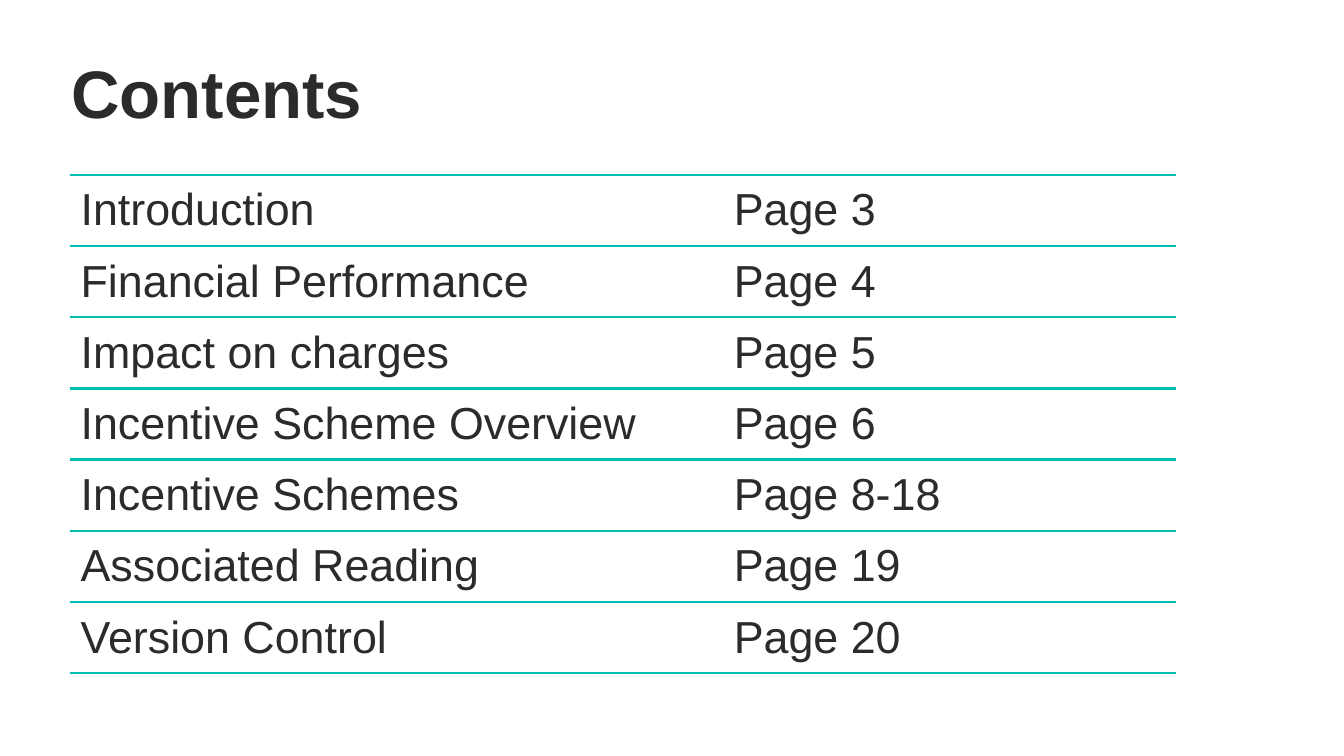
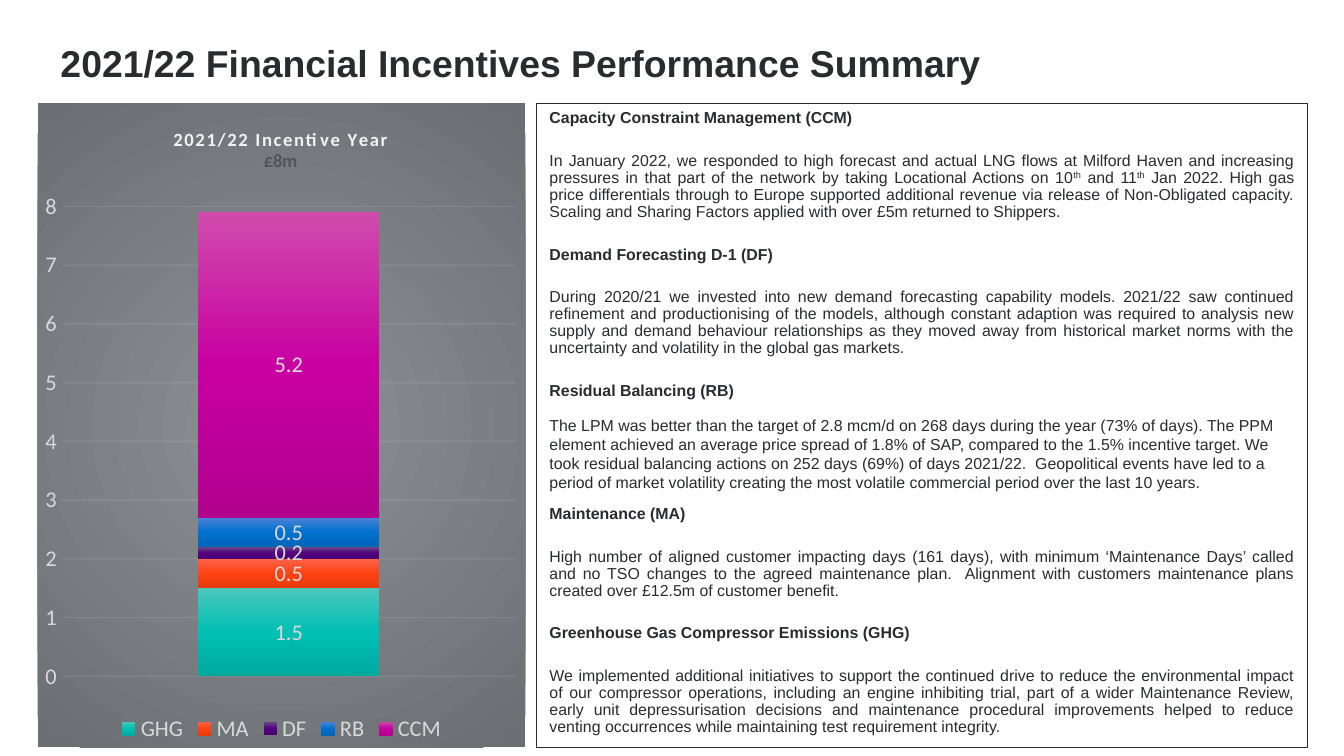
from lxml import etree
from pptx import Presentation
from pptx import util as u
from pptx.chart.data import CategoryChartData
from pptx.dml.color import RGBColor
from pptx.enum import chart as charts, shapes, text
from pptx.oxml import parse_xml
from pptx.oxml.ns import nsdecls, qn

WIDTH = 10
HEIGHT = WIDTH * 9 / 16
FONT, CHART_FONT = "Arial", "Calibri"
COLOURS = {
    "ink": "2A2B2D", "teal": "00BFB3", "grey": "535659",
    "axis": "D9D9D9", "pale": "F2F2F2",
}

CONTENTS = [
    ("Introduction", "Page 3"),
    ("Financial Performance", "Page 4"),
    ("Impact on charges", "Page 5"),
    ("Incentive Scheme Overview", "Page 6"),
    ("Incentive Schemes", "Page 8-18"),
    ("Associated Reading", "Page 19"),
    ("Version Control", "Page 20"),
]

# name, value in £m, gradient from top to bottom
INCENTIVES = [
    ("GHG", 1.5, ("4BC7BC", "00BFB3", "00AA9F")),
    ("MA", 0.5, ("FE624D", "FF4311", "E53A0D")),
    ("DF", 0.2, ("694B89", "52017E", "490071")),
    ("RB", 0.5, ("4B82D5", "0071CE", "0064B7")),
    ("CCM", 5.2, ("D04BAC", "C800A1", "B2008F")),
]
CHART_TITLE = [("2021/22 Incentive Year", "pale", 100), ("£8m", "grey", 0)]
CHART_GLOW = ("8D9195", "6B6F73")

TIGHT = dict(align=text.PP_ALIGN.JUSTIFY, line=0.9, before=7.5, after=6)
LOOSE = dict(align=text.PP_ALIGN.LEFT, line=1.0, before=2.6, after=0)
# heading, commentary (superscripts between ^ marks), paragraph format
COMMENTARY = [
    ("Capacity Constraint Management (CCM)",
     "In January 2022, we responded to high forecast and actual LNG flows at "
     "Milford Haven and increasing pressures in that part of the network by "
     "taking Locational Actions on 10^th^ and 11^th^ Jan 2022. High gas price "
     "differentials through to Europe supported additional revenue via release "
     "of Non-Obligated capacity. Scaling and Sharing Factors applied with over "
     "£5m returned to Shippers.", TIGHT),
    ("Demand Forecasting D-1 (DF)",
     "During 2020/21 we invested into new demand forecasting capability models. "
     "2021/22 saw continued refinement and productionising of the models, "
     "although constant adaption was required to analysis new supply and demand "
     "behaviour relationships as they moved away from historical market norms "
     "with the uncertainty and volatility in the global gas markets.", TIGHT),
    ("Residual Balancing (RB)",
     "The LPM was better than the target of 2.8 mcm/d on 268 days during the "
     "year (73% of days). The PPM element achieved an average price spread of "
     "1.8% of SAP, compared to the 1.5% incentive target. We took residual "
     "balancing actions on 252 days (69%) of days 2021/22.  Geopolitical events "
     "have led to a period of market volatility creating the most volatile "
     "commercial period over the last 10 years.", LOOSE),
    ("Maintenance (MA)",
     "High number of aligned customer impacting days (161 days), with minimum "
     "‘Maintenance Days’ called and no TSO changes to the agreed maintenance "
     "plan.  Alignment with customers maintenance plans created over £12.5m of "
     "customer benefit.", TIGHT),
    ("Greenhouse Gas Compressor Emissions (GHG)",
     "We implemented additional initiatives to support the continued drive to "
     "reduce the environmental impact of our compressor operations, including "
     "an engine inhibiting trial, part of a wider Maintenance Review, early "
     "unit depressurisation decisions and maintenance procedural improvements "
     "helped to reduce venting occurrences while maintaining test requirement "
     "integrity.", TIGHT),
]


def rgb(name):
    return RGBColor.from_string(COLOURS[name])


def style_font(font, size, colour="ink", name=FONT, bold=False):
    font.name, font.size, font.bold = name, u.Pt(size), bold
    font.color.rgb = rgb(colour)


def write(para, words, size, bold=False, align=None, line=None, before=None, after=None):
    """Fill a paragraph; words between ^ marks become superscript."""
    para.alignment, para.line_spacing = align, line
    if before is not None:
        para.space_before = u.Pt(before)
    if after is not None:
        para.space_after = u.Pt(after)
    for index, part in enumerate(words.split("^")):
        span = para.add_run()
        span.text = part
        style_font(span.font, size, bold=bold)
        if index % 2:
            span.font._element.set("baseline", "30000")


def gradient(stops, direction):
    last = len(stops) - 1
    marks = "".join(
        f'<a:gs pos="{100000 * i // last}"><a:srgbClr val="{stop}"/></a:gs>'
        for i, stop in enumerate(stops))
    return parse_xml(f'<a:gradFill {nsdecls("a")} rotWithShape="1">'
                     f'<a:gsLst>{marks}</a:gsLst>{direction}</a:gradFill>')


def add_page(deck, title, size, left, top, width, height):
    page = deck.slides.add_slide(deck.slide_layouts[5])
    box = page.shapes.title
    box.left, box.top, box.width, box.height = map(u.Inches, (left, top, width, height))
    frame = box.text_frame
    frame.auto_size = text.MSO_AUTO_SIZE.NONE
    frame.vertical_anchor = text.MSO_ANCHOR.TOP
    frame.word_wrap = True
    write(frame.paragraphs[0], title, size, bold=True, align=text.PP_ALIGN.LEFT,
          line=0.9, before=0)
    return page


def rule_cell(cell):
    """Draw teal lines above and below a cell and none at its sides."""
    cell.fill.background()
    teal = f'<a:solidFill><a:srgbClr val="{COLOURS["teal"]}"/></a:solidFill>'
    sides = [("L", "<a:noFill/>"), ("R", "<a:noFill/>"), ("T", teal), ("B", teal)]
    for index, (side, paint) in enumerate(sides):
        cell._tc.get_or_add_tcPr().insert(index, parse_xml(
            f'<a:ln{side} {nsdecls("a")} w="{u.Pt(1.5)}">{paint}</a:ln{side}>'))


def add_contents(page, left, top, columns, row_height):
    frame = page.shapes.add_table(
        len(CONTENTS), len(columns), u.Inches(left), u.Inches(top),
        u.Inches(sum(columns)), u.Inches(row_height * len(CONTENTS)))
    table = frame.table
    table.first_row = table.horz_banding = False
    for column, width in zip(table.columns, columns):
        column.width = u.Inches(width)
    for r, entry in enumerate(CONTENTS):
        for c, words in enumerate(entry):
            cell = table.cell(r, c)
            cell.vertical_anchor = text.MSO_ANCHOR.MIDDLE
            cell.margin_left = cell.margin_right = u.Inches(0.08)
            cell.margin_top = cell.margin_bottom = u.Inches(0.07)
            write(cell.text_frame.paragraphs[0], words, 24, after=6)
            rule_cell(cell)


def place(part, before, **shares):
    """Fix a chart part at shares of the chart's size."""
    for old in part.findall(qn("c:layout")):
        part.remove(old)
    inner = '<c:layoutTarget val="inner"/>' if "w" in shares else ""
    modes = "".join(f'<c:{key}Mode val="edge"/>' for key in "xy")
    sizes = "".join(f'<c:{key} val="{share}"/>' for key, share in shares.items())
    layout = parse_xml(f'<c:layout {nsdecls("c")}><c:manualLayout>{inner}{modes}{sizes}'
                       '</c:manualLayout></c:layout>')
    part.find(qn(before)).addprevious(layout)


def add_chart_title(chart):
    frame = chart.chart_title.text_frame
    for index, (words, colour, spacing) in enumerate(CHART_TITLE):
        para = frame.add_paragraph() if index else frame.paragraphs[0]
        span = para.add_run()
        span.text = words
        style_font(span.font, 10, colour, CHART_FONT, bold=True)
        span.font._element.set("spc", str(spacing))
    chart.chart_title.include_in_layout = False
    place(chart.chart_title._element, "c:overlay", x=0.27, y=0.03)


def add_incentive_chart(page, left, top, width, height):
    data = CategoryChartData()
    data.categories = ["1"]
    for name, value, _ in INCENTIVES:
        data.add_series(name, [value])
    chart = page.shapes.add_chart(
        charts.XL_CHART_TYPE.COLUMN_STACKED,
        *map(u.Inches, (left, top, width, height)), data).chart
    style_font(chart.font, 10, "grey", CHART_FONT)
    add_chart_title(chart)

    backdrop = parse_xml(f'<c:spPr {nsdecls("c", "a")}><a:ln><a:noFill/></a:ln></c:spPr>')
    backdrop.insert(0, gradient(
        CHART_GLOW, '<a:path path="circle"><a:fillToRect l="50000" t="50000" '
                    'r="50000" b="50000"/></a:path>'))
    chart._chartSpace.find(qn("c:chart")).addnext(backdrop)

    plot = chart.plots[0]
    plot.gap_width, plot.overlap, plot.vary_by_categories = 150, 100, False
    for series, (_, _, stops) in zip(plot.series, INCENTIVES):
        series._element.get_or_add_spPr().insert(
            0, gradient(stops, '<a:lin ang="5400000" scaled="0"/>'))
        labels = series.data_labels
        labels.show_value = True
        labels.position = charts.XL_LABEL_POSITION.CENTER
        style_font(labels.font, 12, "axis", CHART_FONT)
    place(plot._element.getparent(), "c:barChart", x=0.05, y=0.16, w=0.93, h=0.73)

    chart.category_axis.visible = False
    axis = chart.value_axis
    axis.minimum_scale, axis.maximum_scale, axis.major_unit = 0, 8, 1
    axis.major_tick_mark = axis.minor_tick_mark = charts.XL_TICK_MARK.NONE
    axis.format.line.fill.background()
    style_font(axis.tick_labels.font, 12, "axis", CHART_FONT)
    grid = axis.major_gridlines.format.line
    grid.width = u.Pt(0.75)
    grid.color.rgb = rgb("pale")
    shade = axis.major_gridlines._xAx.find(qn("c:majorGridlines")).find(".//" + qn("a:srgbClr"))
    etree.SubElement(shade, qn("a:alpha")).set("val", "10000")

    chart.has_legend = True
    chart.legend.position = charts.XL_LEGEND_POSITION.BOTTOM
    chart.legend.include_in_layout = False
    style_font(chart.legend.font, 12, "axis", CHART_FONT)


def add_commentary(page, left, top, width, height):
    box = page.shapes.add_shape(
        shapes.MSO_SHAPE.RECTANGLE, *map(u.Inches, (left, top, width, height)))
    box.shadow.inherit = False
    box.fill.background()
    box.line.color.rgb, box.line.width = rgb("ink"), u.Pt(0.75)
    frame = box.text_frame
    frame.word_wrap = True
    frame.vertical_anchor = text.MSO_ANCHOR.TOP
    for index, (heading, words, layout) in enumerate(COMMENTARY):
        para = frame.add_paragraph() if index else frame.paragraphs[0]
        first = {} if index else {"before": 0}
        write(para, heading, 8.5, bold=True, **{**TIGHT, **first})
        write(frame.add_paragraph(), words, 8.5, **layout)


def main():
    deck = Presentation()
    deck.slide_width, deck.slide_height = u.Inches(WIDTH), u.Inches(HEIGHT)

    page = add_page(deck, "Contents", 36, 0.43, 0.4, 9.14, 0.68)
    add_contents(page, left=0.52, top=1.3, columns=(4.86, 3.37), row_height=0.53)

    page = add_page(deck, "2021/22 Financial Incentives Performance Summary", 20,
                    0.35, 0.29, 9.2, 0.56)
    panel_top, panel_height = 0.77, 4.79
    add_commentary(page, 3.99, panel_top, 5.74, panel_height)
    add_incentive_chart(page, 0.28, panel_top, 3.63, panel_height)

    deck.save("out.pptx")


if __name__ == "__main__":
    main()
